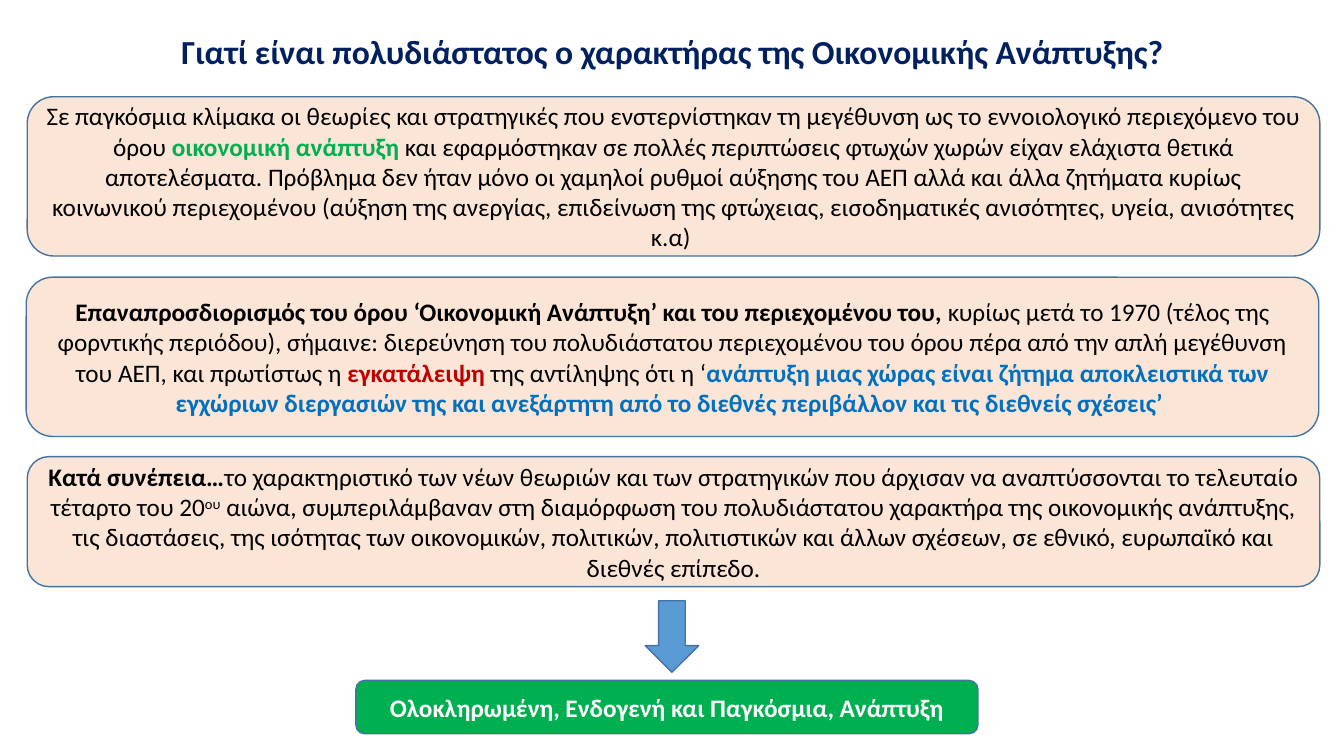
from pptx import Presentation
from pptx.dml.color import RGBColor
from pptx.enum.shapes import MSO_SHAPE
from pptx.enum.text import MSO_ANCHOR, PP_ALIGN
from pptx.util import Inches, Pt

NAVY = RGBColor(0x00, 0x20, 0x60)
PEACH = RGBColor(0xFB, 0xE5, 0xD6)
OUTLINE = RGBColor(0x43, 0x73, 0x9E)
ARROW_BLUE = RGBColor(0x5B, 0x9B, 0xD5)
GREEN = RGBColor(0x00, 0xB0, 0x50)
RED = RGBColor(0xC0, 0x00, 0x00)
BLUE = RGBColor(0x00, 0x70, 0xC0)
BLACK = RGBColor(0x00, 0x00, 0x00)
WHITE = RGBColor(0xFF, 0xFF, 0xFF)
FONT = "Calibri"

TITLE = "Γιατί είναι πολυδιάστατος ο χαρακτήρας της Οικονομικής Ανάπτυξης?"

# Each run: text, colour, bold, superscript
PROBLEM = [
    ("Σε παγκόσμια κλίμακα οι θεωρίες και στρατηγικές που ενστερνίστηκαν τη μεγέθυνση "
     "ως το εννοιολογικό περιεχόμενο του όρου ", BLACK, False, False),
    ("οικονομική ανάπτυξη", GREEN, True, False),
    (" και εφαρμόστηκαν σε πολλές περιπτώσεις φτωχών χωρών είχαν ελάχιστα θετικά "
     "αποτελέσματα. Πρόβλημα δεν ήταν μόνο οι χαμηλοί ρυθμοί αύξησης του ΑΕΠ αλλά και "
     "άλλα ζητήματα κυρίως κοινωνικού περιεχομένου (αύξηση της ανεργίας, επιδείνωση της "
     "φτώχειας, εισοδηματικές ανισότητες, υγεία, ανισότητες κ.α) ", BLACK, False, False),
]
REDEFINITION = [
    ("Επαναπροσδιορισμός του όρου ‘Οικονομική Ανάπτυξη’ και του περιεχομένου του, ",
     BLACK, True, False),
    ("κυρίως μετά το 1970 (τέλος της φορντικής περιόδου), σήμαινε: διερεύνηση του "
     "πολυδιάστατου περιεχομένου του όρου πέρα από την απλή μεγέθυνση του ΑΕΠ, και "
     "πρωτίστως η ", BLACK, False, False),
    ("εγκατάλειψη", RED, True, False),
    (" της αντίληψης ότι η ‘", BLACK, False, False),
    ("ανάπτυξη μιας χώρας είναι ζήτημα αποκλειστικά των εγχώριων διεργασιών της και "
     "ανεξάρτητη από το διεθνές περιβάλλον και τις διεθνείς σχέσεις’ ", BLUE, True, False),
]
CONSEQUENCE = [
    ("Κατά συνέπεια…", BLACK, True, False),
    ("το χαρακτηριστικό των νέων θεωριών και των στρατηγικών που άρχισαν να "
     "αναπτύσσονται το τελευταίο τέταρτο του 20", BLACK, False, False),
    ("ου", BLACK, False, True),
    (" αιώνα, συμπεριλάμβαναν στη διαμόρφωση του πολυδιάστατου χαρακτήρα της οικονομικής "
     "ανάπτυξης, τις διαστάσεις, της ισότητας των οικονομικών, πολιτικών, πολιτιστικών "
     "και άλλων σχέσεων, σε εθνικό, ευρωπαϊκό και διεθνές επίπεδο.", BLACK, False, False),
]
CONCLUSION = [("Ολοκληρωμένη, Ενδογενή και Παγκόσμια, Ανάπτυξη", WHITE, True, False)]

# Shape, (left, top, width, height), fill, runs
ROUNDED = MSO_SHAPE.ROUNDED_RECTANGLE
FLOW = [
    (ROUNDED, (0.27, 0.96, 12.82, 1.58), PEACH, PROBLEM),
    (ROUNDED, (0.26, 2.75, 12.82, 1.58), PEACH, REDEFINITION),
    (ROUNDED, (0.27, 4.53, 12.82, 1.29), PEACH, CONSEQUENCE),
    (MSO_SHAPE.DOWN_ARROW, (6.4, 5.96, 0.53, 0.71), ARROW_BLUE, []),
    (ROUNDED, (3.53, 6.75, 6.17, 0.53), GREEN, CONCLUSION),
]


def write_runs(tf, runs, size):
    tf.word_wrap = True
    tf.vertical_anchor = MSO_ANCHOR.MIDDLE
    p = tf.paragraphs[0]
    p.alignment = PP_ALIGN.CENTER
    for text, color, bold, superscript in runs:
        r = p.add_run()
        r.text = text
        r.font.name = FONT
        r.font.size = Pt(size)
        r.font.bold = bold
        r.font.color.rgb = color
        if superscript:
            r._r.get_or_add_rPr().set("baseline", "30000")
    return p


def add_block(s, kind, box, fill, runs):
    sp = s.shapes.add_shape(kind, *map(Inches, box))
    sp.shadow.inherit = False
    sp.fill.solid()
    sp.fill.fore_color.rgb = fill
    sp.line.color.rgb = OUTLINE
    sp.line.width = Pt(1)
    if runs:
        write_runs(sp.text_frame, runs, 18)


def main():
    prs = Presentation()
    prs.slide_width, prs.slide_height = Inches(13.33), Inches(7.5)
    s = prs.slides.add_slide(prs.slide_layouts[5])

    title = s.shapes.title
    title.left, title.top, title.width, title.height = map(Inches, (0.92, 0.22, 11.5, 0.62))
    p = write_runs(title.text_frame, [(TITLE, NAVY, True, False)], 24)
    p.line_spacing = 0.9

    for block in FLOW:
        add_block(s, *block)
    prs.save("out.pptx")


if __name__ == "__main__":
    main()
